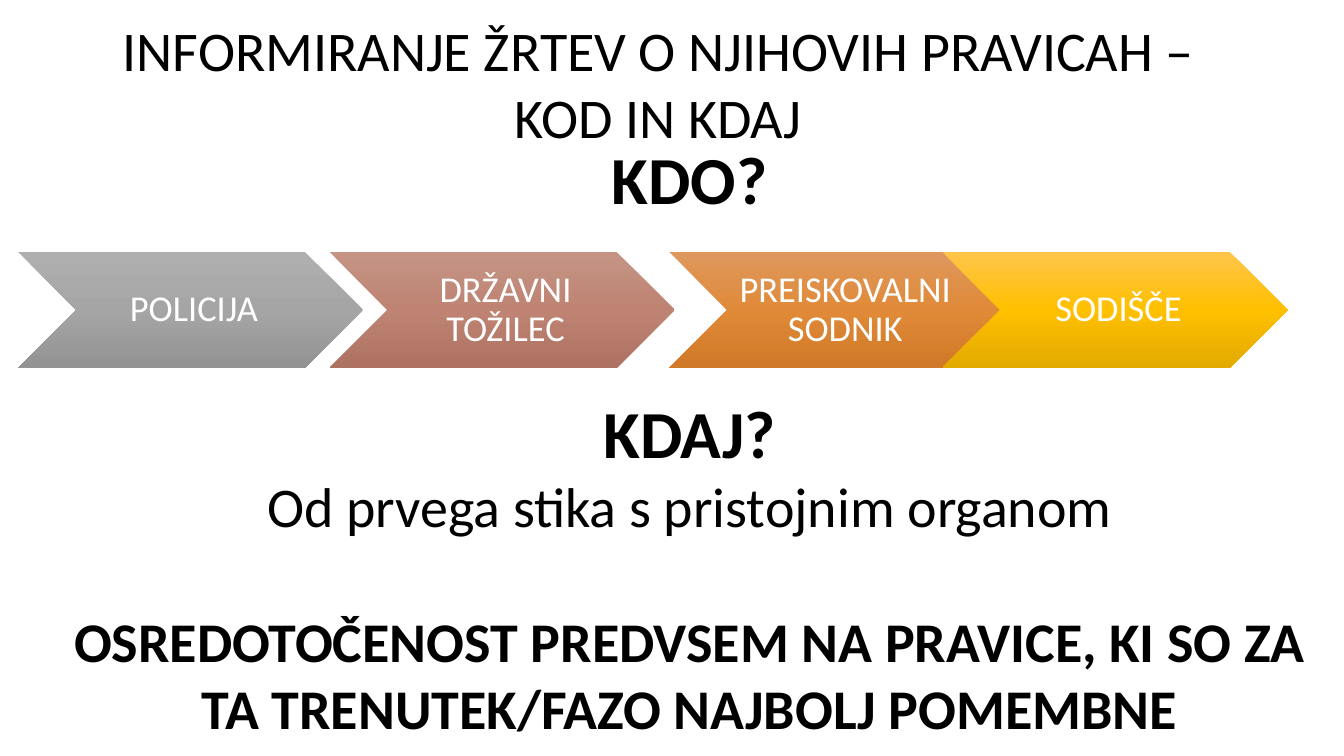
"""Build the slide on informing victims of their rights: who and when."""
import pptx
import pptx.util
import pptx.dml.color
import pptx.enum.shapes
import pptx.enum.text

Inches = pptx.util.Inches
Pt = pptx.util.Pt

COLOURS = {"text": "000000", "label": "FFFFFF"}
FONT = "Calibri"
TITLE = [("INFORMIRANJE ŽRTEV O NJIHOVIH PRAVICAH – KOD IN KDAJ", 40, False, 0)]
BODY = [
    ("KDO?", 48, True, 0),
    ("KDAJ?", 48, True, 124),
    ("Od prvega stika s pristojnim organom", 40, False, 0),
    ("OSREDOTOČENOST PREDVSEM NA PRAVICE, KI SO ZA TA TRENUTEK/FAZO NAJBOLJ POMEMBNE",
     40, True, 48),
]
STAGES = [
    ("POLICIJA", 0.18, ("AFAFAF", "A5A5A5", "939393")),
    ("DRŽAVNI TOŽILEC", 3.27, ("C59485", "BE8373", "AD7262")),
    ("PREISKOVALNI SODNIK", 6.64, ("DE985E", "E08A38", "D07A29")),
    ("SODIŠČE", 9.35, ("FFC54B", "FFC000", "E3AA00")),
]
STAGE_TOP, STAGE_WIDTH, STAGE_HEIGHT = 2.5, 3.42, 1.15
STAGE_POINT = STAGE_HEIGHT / 2


def rgb(value):
    return pptx.dml.color.RGBColor.from_string(value)


def add_text(page, place, lines, colour, insets, anchor, spacing=None):
    box = page.shapes.add_textbox(*map(Inches, place))
    frame = box.text_frame
    frame.word_wrap = True
    frame.vertical_anchor = anchor
    frame.margin_left, frame.margin_top, frame.margin_right, frame.margin_bottom = map(
        Inches, insets)
    for index, (words, size, bold, before) in enumerate(lines):
        para = frame.add_paragraph() if index else frame.paragraphs[0]
        para.alignment = pptx.enum.text.PP_ALIGN.CENTER
        para.space_before = Pt(before)
        para.line_spacing = spacing
        span = para.add_run()
        span.text = words
        span.font.name = FONT
        span.font.size = Pt(size)
        span.font.bold = bold
        span.font.color.rgb = rgb(colour)


def add_stage(page, words, left, shades):
    chevron = page.shapes.add_shape(
        pptx.enum.shapes.MSO_SHAPE.CHEVRON,
        *map(Inches, (left, STAGE_TOP, STAGE_WIDTH, STAGE_HEIGHT)))
    chevron.shadow.inherit = False
    chevron.line.fill.background()
    chevron.fill.gradient()
    chevron.fill.gradient_angle = 270
    stops = chevron.fill._fill._gradFill.gsLst
    stops.insert(1, pptx.oxml.parse_xml(pptx.oxml.xmlchemy.serialize_for_reading(stops[0])))
    for stop, position, shade in zip(chevron.fill.gradient_stops, (0, 0.5, 1), shades):
        stop.position = position
        stop.color.rgb = rgb(shade)
    place = (left + STAGE_POINT, STAGE_TOP, STAGE_WIDTH - 2 * STAGE_POINT, STAGE_HEIGHT)
    add_text(page, place, [(words, 26, False, 0)], COLOURS["label"],
             (0.11, 0.04, 0.04, 0.04), pptx.enum.text.MSO_ANCHOR.MIDDLE, 0.9)


def main():
    deck = pptx.Presentation()
    deck.slide_width, deck.slide_height = Inches(13.33), Inches(7.5)
    page = deck.slides.add_slide(deck.slide_layouts[6])
    add_text(page, (0.84, 0.03, 11.38, 1.58), TITLE, COLOURS["text"],
             (0.1, 0.05, 0.1, 0.05), pptx.enum.text.MSO_ANCHOR.MIDDLE)
    add_text(page, (0.42, 1.36, 12.84, 6.14), BODY, COLOURS["text"],
             (0.04, 0, 0.04, 0), pptx.enum.text.MSO_ANCHOR.TOP)
    for stage in STAGES:
        add_stage(page, *stage)
    deck.save("out.pptx")


if __name__ == "__main__":
    main()
